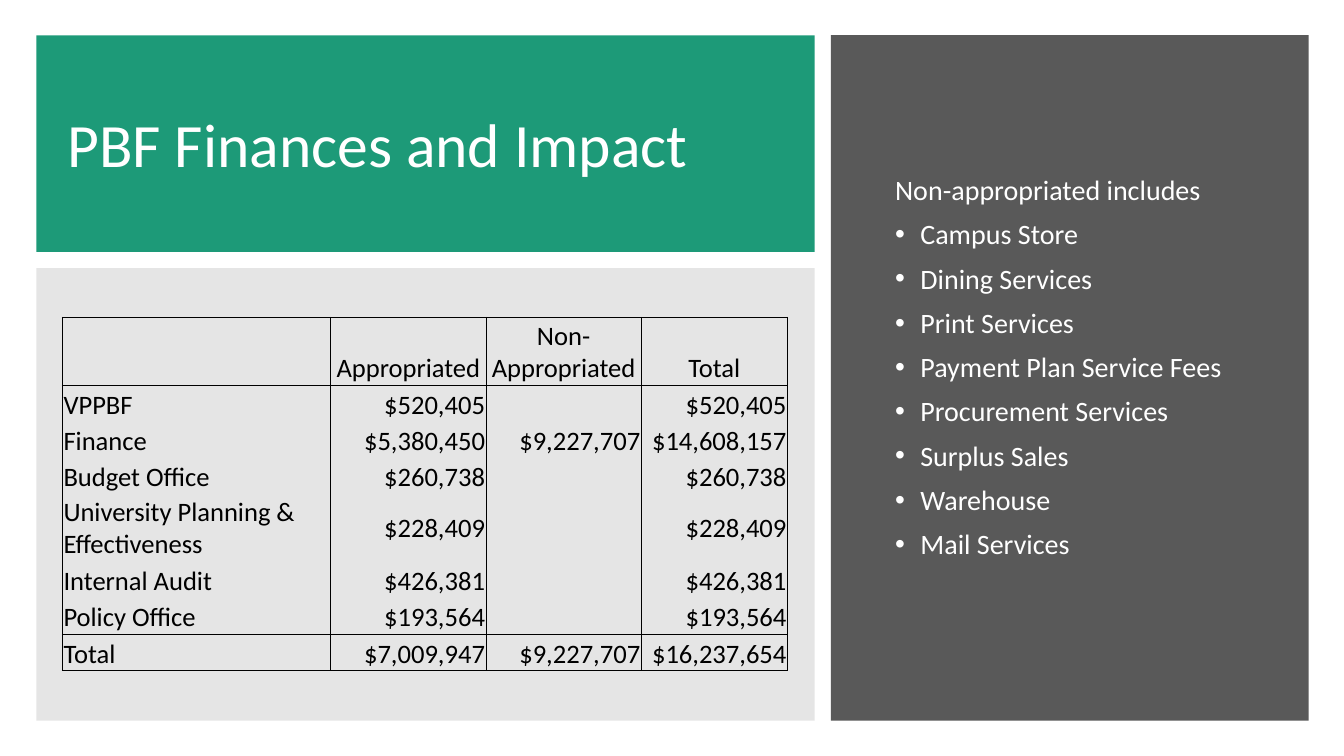
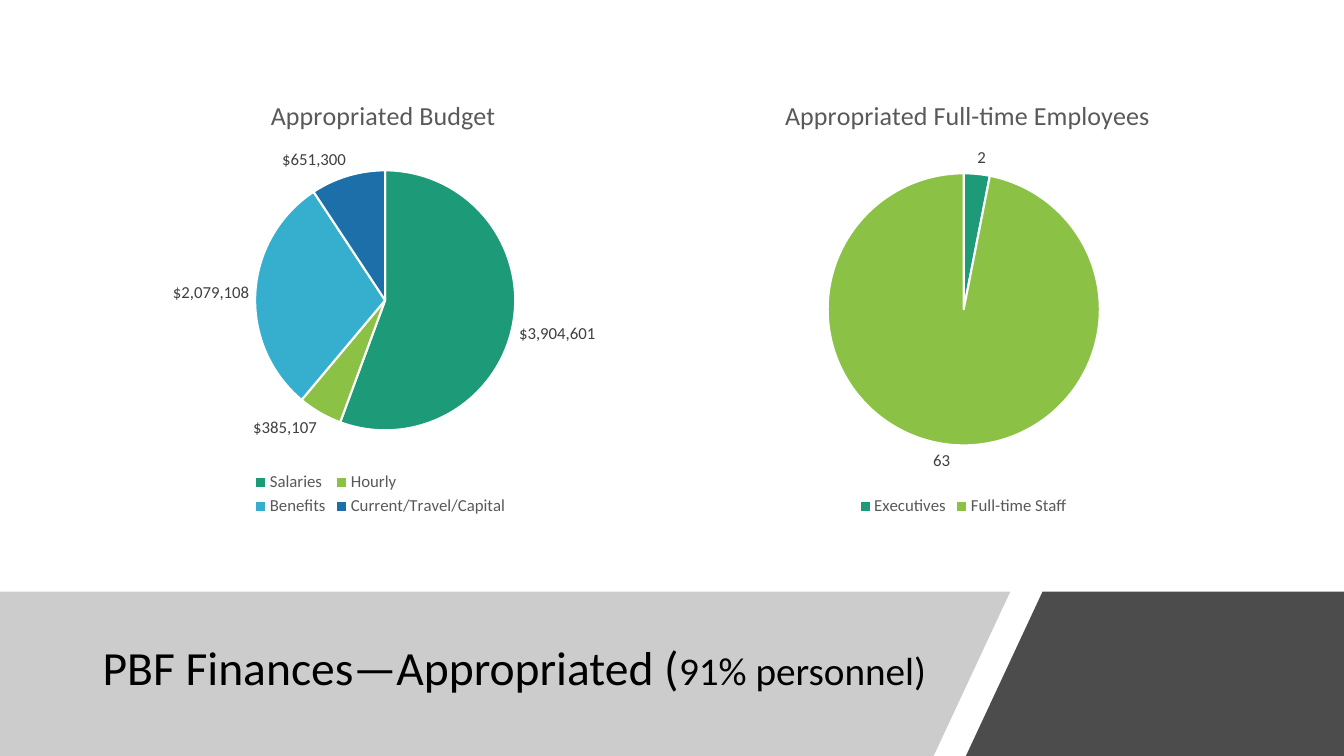
from dataclasses import dataclass

from lxml.etree import SubElement
from pptx import Presentation
from pptx.chart.data import CategoryChartData
from pptx.dml.color import RGBColor
from pptx.enum.chart import XL_CHART_TYPE, XL_LABEL_POSITION, XL_LEGEND_POSITION
from pptx.enum.shapes import MSO_SHAPE
from pptx.enum.text import MSO_ANCHOR, PP_ALIGN
from pptx.oxml.ns import qn
from pptx.util import Pt

PX = 9144  # EMU per px, 100 px to the inch
FONT = "Calibri"
WHITE, BLACK, SLATE, INK = "FFFFFF", "000000", "595959", "404040"
GREEN, GRAY, MID = "1D9A78", "7F7F7F", "808080"
HUES = [GREEN, "8BC145", "36AFCE", "1D6FA9"]
BODY = {"line_spacing": 0.9, "space_before": Pt(10)}
HEAD = {"line_spacing": 0.9}
INSET = {"margin_left": PX, "margin_right": PX, "margin_top": PX, "margin_bottom": 0}


@dataclass
class Box:
    x: int
    y: int
    w: int
    h: int

    def emu(self) -> list[int]:
        return [v * PX for v in (self.x, self.y, self.w, self.h)]


@dataclass
class Panel:
    box: Box
    hue: str
    alpha: int = 100


@dataclass
class Band:
    points: list[tuple[int, int]]
    hue: str
    alpha: int


@dataclass
class Run:
    text: str
    size: float
    hue: str


@dataclass
class Line:
    runs: list[Run]
    bullet: bool = False


@dataclass
class Pie:
    box: Box
    title: str
    head: tuple[int, int]
    plot: Box
    data: dict[str, int]
    code: str


# Shared helpers
def tint(text: str) -> RGBColor:
    return RGBColor.from_string(text)


def put(item, vals: dict) -> None:
    for name, val in vals.items():
        setattr(item, name, val)


def style(font, size: float, hue: str) -> None:
    put(font, {"name": FONT, "size": Pt(size)})
    font.color.rgb = tint(hue)


def paint(shape, hue: str, alpha: int) -> None:
    shape.shadow.inherit = False
    shape.line.fill.background()
    shape.fill.solid()
    shape.fill.fore_color.rgb = tint(hue)
    if alpha < 100:
        node = shape.element.spPr.find(".//" + qn("a:srgbClr"))
        SubElement(node, qn("a:alpha"), val=str(alpha * 1000))


def draw_panel(slide, panel: Panel) -> None:
    shape = slide.shapes.add_shape(MSO_SHAPE.RECTANGLE, *panel.box.emu())
    paint(shape, panel.hue, panel.alpha)


def draw_band(slide, band: Band) -> None:
    form = slide.shapes.build_freeform(*band.points[0], scale=float(PX))
    form.add_line_segments(band.points[1:], close=True)
    paint(form.convert_to_shape(), band.hue, band.alpha)


def draw_text(slide, box: Box, lines: list[Line], form: dict) -> None:
    frame = slide.shapes.add_textbox(*box.emu()).text_frame
    put(frame, {"word_wrap": True, "vertical_anchor": MSO_ANCHOR.MIDDLE})
    for i, line in enumerate(lines):
        para = frame.add_paragraph() if i else frame.paragraphs[0]
        put(para, form)
        for part in line.runs:
            run = para.add_run()
            run.text = part.text
            style(run.font, part.size, part.hue)
        if line.bullet:
            props = para._p.get_or_add_pPr()
            props.set("marL", str(25 * PX))
            props.set("indent", str(-25 * PX))
            SubElement(props, qn("a:buFont"), typeface="Arial")
            SubElement(props, qn("a:buChar"), char="•")


# Table
def edge(props, spot: int, side: str, width: float) -> None:
    node = SubElement(props, qn("a:ln" + side), w=str(int(Pt(width))))
    if width:
        fill = SubElement(node, qn("a:solidFill"))
        SubElement(fill, qn("a:srgbClr"), val=BLACK)
    else:
        SubElement(node, qn("a:noFill"))
    props.insert(spot, node)


def draw_table(slide, box: Box, cols: list[int], rows: list[int],
               cells: list[list[str]]) -> None:
    table = slide.shapes.add_table(len(rows), len(cols), *box.emu()).table
    put(table, {"first_row": False, "horz_banding": False})
    for col, size in zip(table.columns, cols):
        col.width = size * PX
    for row, size in zip(table.rows, rows):
        row.height = size * PX
    last, end = len(rows), len(cols)
    rules = {0: 1, 1: 0.5, last - 1: 0.5, last: 1}
    for r, texts in enumerate(cells):
        tall = r and rows[r] > 36
        for c, text in enumerate(texts):
            cell = table.cell(r, c)
            put(cell, INSET)
            cell.vertical_anchor = MSO_ANCHOR.MIDDLE if tall else MSO_ANCHOR.BOTTOM
            cell.fill.background()
            para = cell.text_frame.paragraphs[0]
            if r == 0:
                para.alignment = PP_ALIGN.CENTER
            elif c:
                para.alignment = PP_ALIGN.RIGHT
            if text:
                run = para.add_run()
                run.text = text
                style(run.font, 19, BLACK)
            sides = {"L": 0.5 if c else 1, "R": 0.5 if c < end - 1 else 1,
                     "T": rules.get(r, 0), "B": rules.get(r + 1, 0)}
            for i, (side, width) in enumerate(sides.items()):
                edge(cell._tc.get_or_add_tcPr(), i, side, width)


# Charts
def place(node, spot: int, vals: dict[str, float], inner: bool) -> None:
    old = node.find(qn("c:layout"))
    if old is not None:
        node.remove(old)
    lay = SubElement(node, qn("c:layout"))
    node.insert(spot, lay)
    man = SubElement(lay, qn("c:manualLayout"))
    if inner:
        SubElement(man, qn("c:layoutTarget"), val="inner")
    for key in ("xMode", "yMode"):
        SubElement(man, qn("c:" + key), val="edge")
    for key, val in vals.items():
        SubElement(man, qn("c:" + key), val=f"{val:.4f}")


def draw_pie(slide, pie: Pie) -> None:
    data = CategoryChartData(number_format=pie.code)
    data.categories = list(pie.data)
    data.add_series("Series 1", list(pie.data.values()))
    chart = slide.shapes.add_chart(XL_CHART_TYPE.PIE, *pie.box.emu(), data).chart
    style(chart.font, 10, BLACK)
    # Title and legend
    chart.has_title = True
    frame = chart.chart_title.text_frame
    frame.text = pie.title
    font = frame.paragraphs[0].runs[0].font
    style(font, 18.6, SLATE)
    font.bold = False
    chart.has_legend = True
    put(chart.legend, {"position": XL_LEGEND_POSITION.BOTTOM,
                       "include_in_layout": False})
    style(chart.legend.font, 12, SLATE)
    # Slices and labels
    plot = chart.plots[0]
    put(plot, {"vary_by_categories": True, "has_data_labels": True})
    put(plot.data_labels, {"show_value": True, "show_percentage": False,
                           "position": XL_LABEL_POSITION.OUTSIDE_END,
                           "number_format": pie.code,
                           "number_format_is_linked": False})
    style(plot.data_labels.font, 12, INK)
    for i in range(len(pie.data)):
        form = plot.series[0].points[i].format
        form.fill.solid()
        form.fill.fore_color.rgb = tint(HUES[i])
        form.line.color.rgb = tint(WHITE)
        form.line.width = Pt(1.5)
    # Positions inside the chart
    w, h = pie.box.w, pie.box.h
    x, y = pie.head
    area = pie.plot
    root = chart.element
    place(root.find(".//" + qn("c:title")), 1, {"x": x / w, "y": y / h}, False)
    place(root.find(".//" + qn("c:plotArea")), 0,
          {"x": area.x / w, "y": area.y / h, "w": area.w / w, "h": area.h / h}, True)


# Slide content
PANELS = [Panel(Box(36, 35, 772, 215), GREEN),
          Panel(Box(36, 266, 772, 449), GRAY, 20),
          Panel(Box(824, 35, 474, 680), SLATE)]
ITEMS = ["Campus Store", "Dining Services", "Print Services",
         "Payment Plan Service Fees", "Procurement Services", "Surplus Sales",
         "Warehouse", "Mail Services"]
COLS = [266, 154, 154, 145]
ROWS = [67, 36, 36, 36, 67, 36, 36, 36]
CELLS = [
    ["", "Appropriated", "Non-Appropriated", "Total"],
    ["VPPBF", "$520,405", "", "$520,405"],
    ["Finance", "$5,380,450", "$9,227,707", "$14,608,157"],
    ["Budget Office", "$260,738", "", "$260,738"],
    ["University Planning & Effectiveness", "$228,409", "", "$228,409"],
    ["Internal Audit", "$426,381", "", "$426,381"],
    ["Policy Office", "$193,564", "", "$193,564"],
    ["Total", "$7,009,947", "$9,227,707", "$16,237,654"],
]
BANDS = [Band([(0, 587), (1002, 587), (926, 750), (0, 750)], MID, 40),
         Band([(1034, 587), (1333, 587), (1333, 750), (958, 750)], BLACK, 70)]
PIES = [
    Pie(Box(92, 70, 571, 446), "Appropriated Budget", (172, 22),
        Box(161, 99, 258, 258),
        {"Salaries": 3904601, "Hourly": 385107, "Benefits": 2079108,
         "Current/Travel/Capital": 651300}, '"$"#,##0'),
    Pie(Box(670, 70, 571, 446), "Appropriated Full-time Employees", (104, 22),
        Box(151, 102, 270, 270),
        {"Executives": 2, "Full-time Staff": 63}, "General"),
]


def main() -> None:
    deck = Presentation()
    put(deck, {"slide_width": 1333 * PX, "slide_height": 750 * PX})
    first, second = [deck.slides.add_slide(deck.slide_layouts[6]) for _ in range(2)]

    # Finances and impact
    for panel in PANELS:
        draw_panel(first, panel)
    draw_text(first, Box(57, 57, 721, 178),
              [Line([Run("PBF Finances and Impact", 44, WHITE)])], HEAD)
    lines = [Line([Run("Non-appropriated includes", 20, WHITE)])]
    lines += [Line([Run(item, 20, WHITE)], True) for item in ITEMS]
    draw_text(first, Box(878, 100, 375, 531), lines, BODY)
    draw_table(first, Box(62, 315, sum(COLS), sum(ROWS)), COLS, ROWS, CELLS)

    # Appropriated share
    for band in BANDS:
        draw_band(second, band)
    draw_text(second, Box(92, 605, 844, 120),
              [Line([Run("PBF Finances—Appropriated (", 34, BLACK),
                     Run("91% personnel)", 28, BLACK)])], HEAD)
    for pie in PIES:
        draw_pie(second, pie)
    deck.save("out.pptx")


if __name__ == "__main__":
    main()
